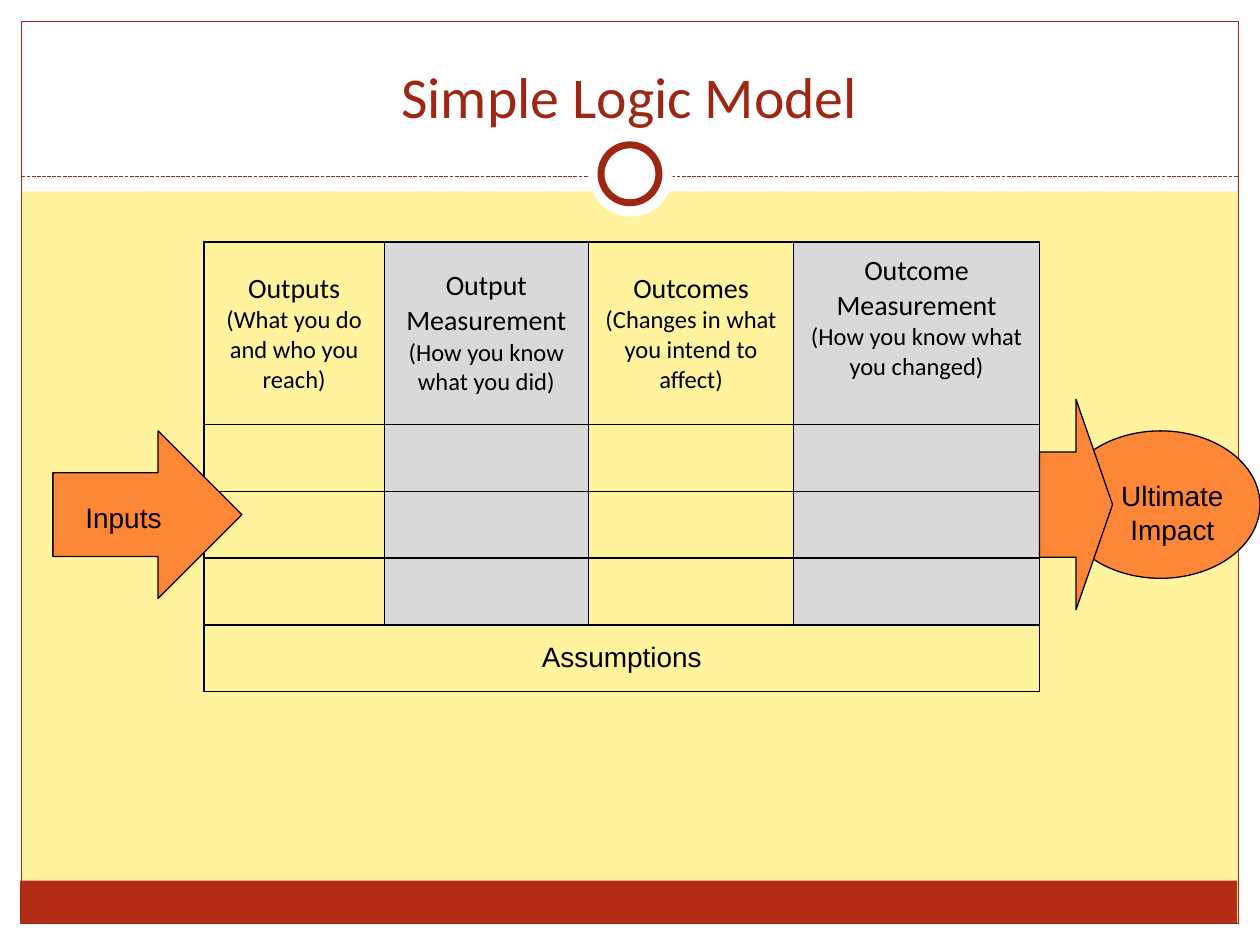
from lxml import etree
from pptx import Presentation
from pptx import util as u
from pptx.dml.color import RGBColor
from pptx.enum import dml, shapes, text
from pptx.oxml.ns import qn

CREAM = RGBColor(0xFF, 0xF3, 0x9D)
WHITE = RGBColor(0xFF, 0xFF, 0xFF)
BLACK = RGBColor(0, 0, 0)
BRICK = RGBColor(0xB3, 0x2C, 0x16)
RUST = RGBColor(0x9E, 0x27, 0x13)
ORANGE = RGBColor(0xFE, 0x86, 0x37)
GREY = RGBColor(0xD9, 0xD9, 0xD9)

KIND = shapes.MSO_SHAPE
MID = text.PP_ALIGN.CENTER
LEFT = text.PP_ALIGN.LEFT


class Deck:
    """Holds the style and the current slide."""
    body = {"name": "Calibri", "size": u.Pt(16)}
    note = {"name": "Calibri", "size": u.Pt(14)}
    label = {"name": "Arial", "size": u.Pt(16)}
    head = {"name": "Calibri", "size": u.Pt(33)}

    def __init__(self):
        self.prs = Presentation()
        self.prs.slide_width, self.prs.slide_height = u.Inches(10), u.Inches(7.5)
        self.slide = self.prs.slides.add_slide(self.prs.slide_layouts[5])
        fill = self.slide.background.fill
        fill.solid()
        fill.fore_color.rgb = CREAM

    def put(self, para, words, style, color=BLACK, align=MID):
        para.alignment = align
        run = para.add_run()
        run.text = words
        for key, value in style.items():
            setattr(run.font, key, value)
        run.font.color.rgb = color

    def shape(self, kind, box, fill=None, line=None, width=0.75):
        item = self.slide.shapes.add_shape(kind, *map(u.Inches, box))
        item.shadow.inherit = False
        if fill is None:
            item.fill.background()
        else:
            item.fill.solid()
            item.fill.fore_color.rgb = fill
        if line is None:
            item.line.fill.background()
        else:
            item.line.color.rgb = line
            item.line.width = u.Pt(width)
        return item

    def rule(self, start, end):
        line = self.slide.shapes.add_connector(
            shapes.MSO_CONNECTOR.STRAIGHT, *map(u.Inches, start + end))
        line.line.color.rgb = RUST
        line.line.width = u.Pt(0.75)
        line.line.dash_style = dml.MSO_LINE.SQUARE_DOT
        etree.SubElement(line._element.spPr, qn("a:effectLst"))

    def title(self, words, box):
        item = self.slide.shapes.title
        places = zip(("left", "top", "width", "height"), box)
        for key, value in places:
            setattr(item, key, u.Inches(value))
        frame = item.text_frame
        frame.auto_size = text.MSO_AUTO_SIZE.NONE
        frame.vertical_anchor = text.MSO_ANCHOR.BOTTOM
        self.put(frame.paragraphs[0], words, self.head, RUST)
        # Bring the title in front of the frame
        self.slide.shapes._spTree.append(item._element)

    def text(self, words, box, align):
        frame = self.slide.shapes.add_textbox(*map(u.Inches, box)).text_frame
        frame.word_wrap = True
        self.put(frame.paragraphs[0], words, self.label, align=align)

    def border(self, cell):
        props = cell._tc.get_or_add_tcPr()
        for spot, side in enumerate(("a:lnL", "a:lnR", "a:lnT", "a:lnB")):
            line = etree.Element(qn(side), w=str(u.Pt(1)))
            fill = etree.SubElement(line, qn("a:solidFill"))
            etree.SubElement(fill, qn("a:srgbClr"), val=str(BLACK))
            props.insert(spot, line)

    def table(self, spot, cols, rows, heads, foot):
        size = (sum(cols), sum(rows))
        grid = self.slide.shapes.add_table(
            len(rows), len(cols), *map(u.Inches, spot + size)).table
        grid.first_row = grid.horz_banding = False
        for col, width in zip(grid.columns, cols):
            col.width = u.Inches(width)
        for row, height in zip(grid.rows, rows):
            row.height = u.Inches(height)
        last = len(rows) - 1
        for r in range(len(rows)):
            for c in range(len(cols)):
                cell = grid.cell(r, c)
                cell.vertical_anchor = text.MSO_ANCHOR.MIDDLE
                cell.margin_left = cell.margin_right = u.Inches(0.11)
                # Measurement columns are grey above the footer
                if c % 2 and r < last:
                    cell.fill.solid()
                    cell.fill.fore_color.rgb = GREY
                else:
                    cell.fill.background()
                self.border(cell)
        for c, (name, hint) in enumerate(heads):
            frame = grid.cell(0, c).text_frame
            self.put(frame.paragraphs[0], name, self.body)
            self.put(frame.add_paragraph(), hint, self.note)
        # The last heading sits a little higher
        grid.cell(0, len(cols) - 1).margin_bottom = u.Inches(0.29)
        base = grid.cell(last, 0)
        base.merge(grid.cell(last, len(cols) - 1))
        self.put(base.text_frame.paragraphs[0], foot, self.label)


def main():
    deck = Deck()

    # Frame
    for box in ((0, 7.33, 10, 0.17), (0, 0, 10, 1.52),
                (0, 0, 0.17, 7.5), (9.83, 0, 0.17, 7.5)):
        deck.shape(KIND.RECTANGLE, box, WHITE)
    deck.shape(KIND.RECTANGLE, (0.16, 6.99, 9.66, 0.34), BRICK)
    deck.shape(KIND.RECTANGLE, (0.17, 0.17, 9.66, 7.16), line=RUST)
    deck.rule((0.17, 1.4), (9.83, 1.4))
    deck.shape(KIND.OVAL, (4.67, 1.05, 0.67, 0.67), WHITE)
    deck.shape(KIND.OVAL, (4.77, 1.15, 0.46, 0.46), WHITE, RUST, 4)
    deck.title("Simple Logic Model", (0.33, 0.25, 9.33, 0.83))

    # Logic model
    heads = (
        ("Outputs", "(What you do and who you reach)"),
        ("Output Measurement", "(How you know what you did)"),
        ("Outcomes", "(Changes in what you intend to affect)"),
        ("Outcome Measurement", "(How you know what you changed)"),
    )
    deck.table((1.62, 1.92), (1.43, 1.62, 1.63, 1.95),
               (1.45,) + (0.53,) * 4, heads, "Assumptions")

    # Inputs and impact
    deck.shape(KIND.RIGHT_ARROW, (0.42, 3.42, 1.5, 1.33), ORANGE, BLACK)
    deck.shape(KIND.OVAL, (8.42, 3.42, 1.58, 1.17), ORANGE, BLACK)
    deck.text("Inputs", (0.58, 3.92, 0.92, 0.37), LEFT)
    deck.text("Ultimate Impact", (8.67, 3.75, 1.27, 0.64), MID)
    deck.shape(KIND.RIGHT_ARROW, (8.25, 3.17, 0.58, 1.67), ORANGE, BLACK)

    deck.prs.save("out.pptx")


if __name__ == "__main__":
    main()
